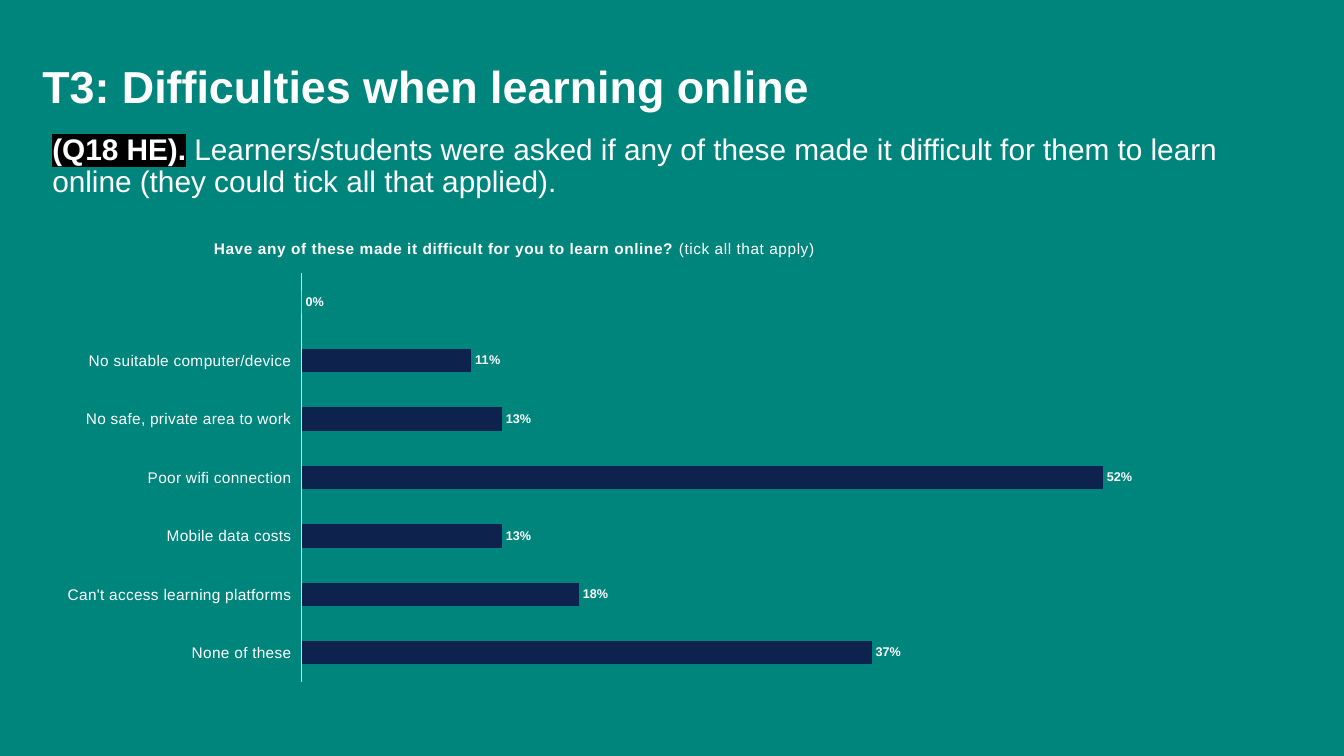
from lxml.etree import SubElement
from pptx import Presentation
from pptx.chart.data import CategoryChartData
from pptx.dml.color import RGBColor
from pptx.enum.chart import XL_CHART_TYPE, XL_LABEL_POSITION, XL_TICK_LABEL_POSITION, XL_TICK_MARK
from pptx.enum.text import MSO_ANCHOR, PP_ALIGN
from pptx.oxml import parse_xml
from pptx.oxml.ns import nsdecls, qn
from pptx.util import Inches, Pt

# Content
TITLE = "T3: Difficulties when learning online"
QUESTION_NUMBER = "(Q18 HE)."
INTRO = (" Learners/students were asked if any of these made it difficult for them "
         "to learn online (they could tick all that applied).")
CHART_QUESTION = "Have any of these made it difficult for you to learn online? "
CHART_HINT = "(tick all that apply)"
DIFFICULTIES = [
    ("", 0),
    ("No suitable computer/device", 0.11),
    ("No safe, private area to work", 0.13),
    ("Poor wifi connection", 0.52),
    ("Mobile data costs", 0.13),
    ("Can't access learning platforms", 0.18),
    ("None of these", 0.37),
]

FONT = "Arial"
TEAL = RGBColor(0x00, 0x85, 0x7D)
NAVY = RGBColor(0x0D, 0x22, 0x4C)
WHITE = RGBColor(0xFF, 0xFF, 0xFF)
GREY = RGBColor(0xD9, 0xD9, 0xD9)


def style(font, size, bold=False):
    font.name = FONT
    font.size = Pt(size)
    font.bold = bold
    font.color.rgb = WHITE


def add_run(paragraph, text, size, bold=False):
    run = paragraph.add_run()
    run.text = text
    style(run.font, size, bold)
    return run


def set_layout(parent, index, inner=False, **fractions):
    """Place a chart part by fractions of the chart's size."""
    for old in parent.findall(qn("c:layout")):
        parent.remove(old)
    layout = parse_xml(f"<c:layout {nsdecls('c')}><c:manualLayout/></c:layout>")
    if inner:
        SubElement(layout[0], qn("c:layoutTarget")).set("val", "inner")
    for side in ("x", "y"):
        SubElement(layout[0], qn(f"c:{side}Mode")).set("val", "edge")
    for side, fraction in fractions.items():
        SubElement(layout[0], qn(f"c:{side}")).set("val", str(fraction))
    parent.insert(index, layout)


prs = Presentation()
prs.slide_width, prs.slide_height = Inches(13.33), Inches(7.5)
slide = prs.slides.add_slide(prs.slide_layouts[5])
slide.background.fill.solid()
slide.background.fill.fore_color.rgb = TEAL

# Title
title = slide.shapes.title
title.left, title.top = Inches(0.42), Inches(0.6)
title.width, title.height = Inches(9.5), Inches(0.5)
frame = title.text_frame
frame.margin_left = frame.margin_right = frame.margin_top = frame.margin_bottom = 0
frame.vertical_anchor = MSO_ANCHOR.MIDDLE
frame.paragraphs[0].alignment = PP_ALIGN.LEFT
add_run(frame.paragraphs[0], TITLE, 32, bold=True)

# Introduction with highlighted question number
intro = slide.shapes.add_textbox(Inches(0.42), Inches(1.29), Inches(11.98), Inches(0.82))
intro.text_frame.word_wrap = True
paragraph = intro.text_frame.paragraphs[0]
paragraph.line_spacing = 0.9
paragraph.space_before = Pt(10)
number = add_run(paragraph, QUESTION_NUMBER, 21.3, bold=True)
highlight = parse_xml(f'<a:highlight {nsdecls("a")}><a:srgbClr val="000000"/></a:highlight>')
number.font.fill  # the fill precedes the highlight in the run properties
paragraph._p.find(".//" + qn("a:solidFill")).addnext(highlight)
add_run(paragraph, INTRO, 21.3)

# Bar chart
data = CategoryChartData(number_format="0%")
data.categories = [label for label, _ in DIFFICULTIES]
data.add_series("Series 1", [share for _, share in DIFFICULTIES])
chart = slide.shapes.add_chart(XL_CHART_TYPE.BAR_CLUSTERED, Inches(0.55), Inches(2.19),
                               Inches(11.85), Inches(4.67), data).chart
chart.has_legend = False
chart.font.name = FONT
chart.font.size = Pt(10)

# Chart title
heading = chart.chart_title.text_frame.paragraphs[0]
add_run(heading, CHART_QUESTION, 11, bold=True)
add_run(heading, CHART_HINT, 11)

# Bars and their labels
plot = chart.plots[0]
plot.gap_width = 150
plot.vary_by_categories = False
bars = plot.series[0]
bars.format.fill.solid()
bars.format.fill.fore_color.rgb = NAVY
labels = bars.data_labels
labels.show_value = True
labels.number_format = "0%"
labels.number_format_is_linked = False
labels.position = XL_LABEL_POSITION.OUTSIDE_END
style(labels.font, 9, bold=True)

# Axes
difficulty_axis = chart.category_axis
difficulty_axis.reverse_order = True
difficulty_axis.major_tick_mark = XL_TICK_MARK.NONE
difficulty_axis.tick_label_position = XL_TICK_LABEL_POSITION.LOW
difficulty_axis.format.line.color.rgb = GREY
difficulty_axis.format.line.width = Pt(0.75)
style(difficulty_axis.tick_labels.font, 11)
share_axis = chart.value_axis
share_axis.minimum_scale, share_axis.maximum_scale = 0, 0.6
share_axis.has_major_gridlines = False
share_axis.visible = False

# Letter spacing and placement inside the chart
chart_xml = chart.element
for query, spacing in ((".//c:title//a:rPr", 30), (".//c:catAx//a:defRPr", 10)):
    for properties in chart_xml.xpath(query):
        properties.set("spc", str(spacing))
set_layout(chart_xml.xpath(".//c:chart/c:title")[0], 1, x=0.13, y=0.03)
set_layout(chart_xml.xpath(".//c:plotArea")[0], 0, inner=True, x=0.206, y=0.111, w=0.774, h=0.869)

prs.save("out.pptx")
